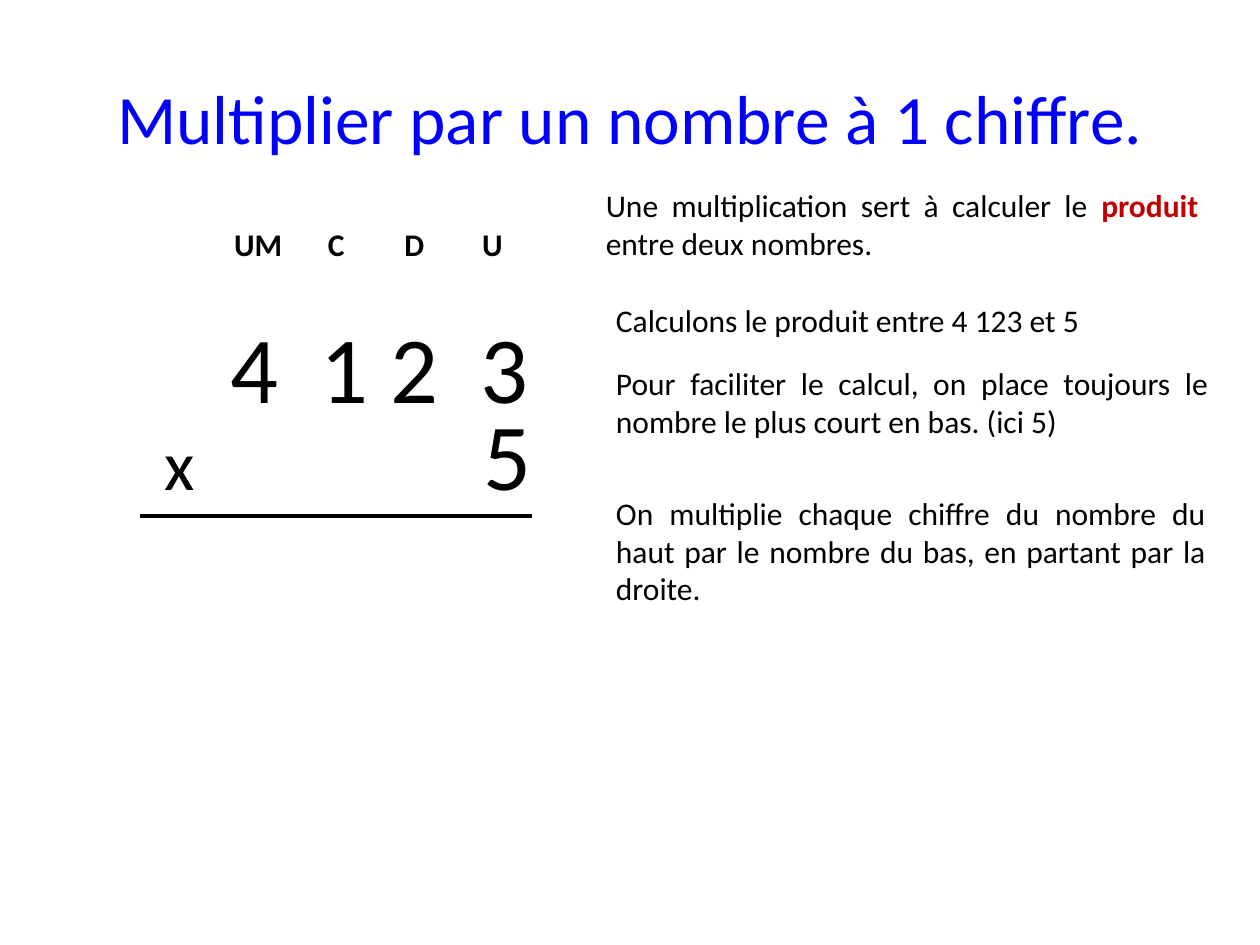
from lxml.etree import SubElement
from pptx import Presentation
from pptx.dml.color import RGBColor
from pptx.enum.text import MSO_ANCHOR, MSO_AUTO_SIZE, PP_ALIGN
from pptx.oxml.ns import qn
from pptx.util import Inches, Pt

COLORS = {"title": "0000FF", "text": "000000", "accent": "C00000"}
FONT = "Calibri"
COLUMN_WIDTH = 0.62
ROW_HEIGHTS = [0.4, 0.58, 0.58, 0.78]
PLACES = ["UM", "C", "D", "U"]


def add_span(para, text, size, color="text", bold=False):
    span = para.add_run()
    span.text = text
    span.font.name = FONT
    span.font.size = Pt(size)
    span.font.bold = bold
    span.font.color.rgb = RGBColor.from_string(COLORS[color])
    return span


def add_title(page, text):
    title = page.shapes.title
    title.left, title.top = Inches(0.5), Inches(0.3)
    title.width, title.height = Inches(9), Inches(1.25)
    title.text_frame.vertical_anchor = MSO_ANCHOR.MIDDLE
    para = title.text_frame.paragraphs[0]
    para.alignment = PP_ALIGN.CENTER
    add_span(para, text, 39.6, "title")


def add_box(page, left, top, width, height, align=PP_ALIGN.LEFT):
    """Add a wrapping text box and return its empty paragraph."""
    box = page.shapes.add_textbox(Inches(left), Inches(top), Inches(width), Inches(height))
    frame = box.text_frame
    frame.word_wrap = True
    frame.auto_size = MSO_AUTO_SIZE.SHAPE_TO_FIT_TEXT
    para = frame.paragraphs[0]
    para.alignment = align
    return para


def fill_cell(cell, text, size, bold=False):
    cell.vertical_anchor = MSO_ANCHOR.MIDDLE
    para = cell.text_frame.paragraphs[0]
    para.alignment = PP_ALIGN.CENTER
    add_span(para, text, size, bold=bold)


def underline_cell(cell):
    """Draw a solid bottom border; it has to come before the cell's fill."""
    props = cell._tc.get_or_add_tcPr()
    line = SubElement(props, qn("a:lnB"), w=str(Pt(3)))
    fill = SubElement(line, qn("a:solidFill"))
    SubElement(fill, qn("a:srgbClr"), val=COLORS["text"])


def add_place_table(page):
    columns = len(PLACES) + 2
    frame = page.shapes.add_table(
        len(ROW_HEIGHTS), columns, Inches(0.5), Inches(1.75),
        Inches(COLUMN_WIDTH * columns), Inches(sum(ROW_HEIGHTS)))
    table = frame.table
    table.first_row = table.horz_banding = False
    for column in table.columns:
        column.width = Inches(COLUMN_WIDTH)
    for row, height in zip(table.rows, ROW_HEIGHTS):
        row.height = Inches(height)

    last_row = len(ROW_HEIGHTS) - 1
    for index in range(1, columns):
        underline_cell(table.cell(last_row, index))
    for cell in table.iter_cells():
        cell.fill.background()
    for index, place in enumerate(PLACES, start=2):
        fill_cell(table.cell(0, index), place, 18, bold=True)
    fill_cell(table.cell(last_row, 1), "x", 40)


def add_factors(page):
    """Write both factors; wider gaps come from character spacing."""
    para = add_box(page, 1.73, 2.4, 3.07, 1.01)
    for text, extra in [("4", 0), (" ", 12.2), ("1 2", 0), (" ", 12.2), ("3", 0)]:
        span = add_span(para, text, 54)
        if extra:
            span._r.get_or_add_rPr().set("spc", str(round(extra * 100)))
    add_span(add_box(page, 3.74, 3.09, 0.79, 1.01), "5", 54)


def add_explanations(page):
    justify = PP_ALIGN.JUSTIFY
    para = add_box(page, 4.71, 1.43, 4.9, 0.71, justify)
    add_span(para, "Une multiplication sert à calculer le ", 18)
    add_span(para, "produit", 18, "accent", bold=True)
    add_span(para, " entre deux nombres.", 18)
    for top, width, height, align, text in [
        (2.34, 4.9, 0.4, PP_ALIGN.LEFT, "Calculons le produit entre 4 123 et 5"),
        (2.84, 4.9, 0.71, justify,
         "Pour faciliter le calcul, on place toujours le nombre le plus court "
         "en bas. (ici 5)"),
        (3.87, 4.88, 1.01, justify,
         "On multiplie chaque chiffre du nombre du haut par le nombre du bas, "
         "en partant par la droite."),
    ]:
        add_span(add_box(page, 4.79, top, width, height, align), text, 18)


def main():
    deck = Presentation()
    deck.slide_width, deck.slide_height = Inches(10), Inches(7.5)
    page = deck.slides.add_slide(deck.slide_layouts[5])
    add_title(page, "Multiplier par un nombre à 1 chiffre.")
    add_place_table(page)
    add_explanations(page)
    add_factors(page)
    deck.save("out.pptx")


if __name__ == "__main__":
    main()
